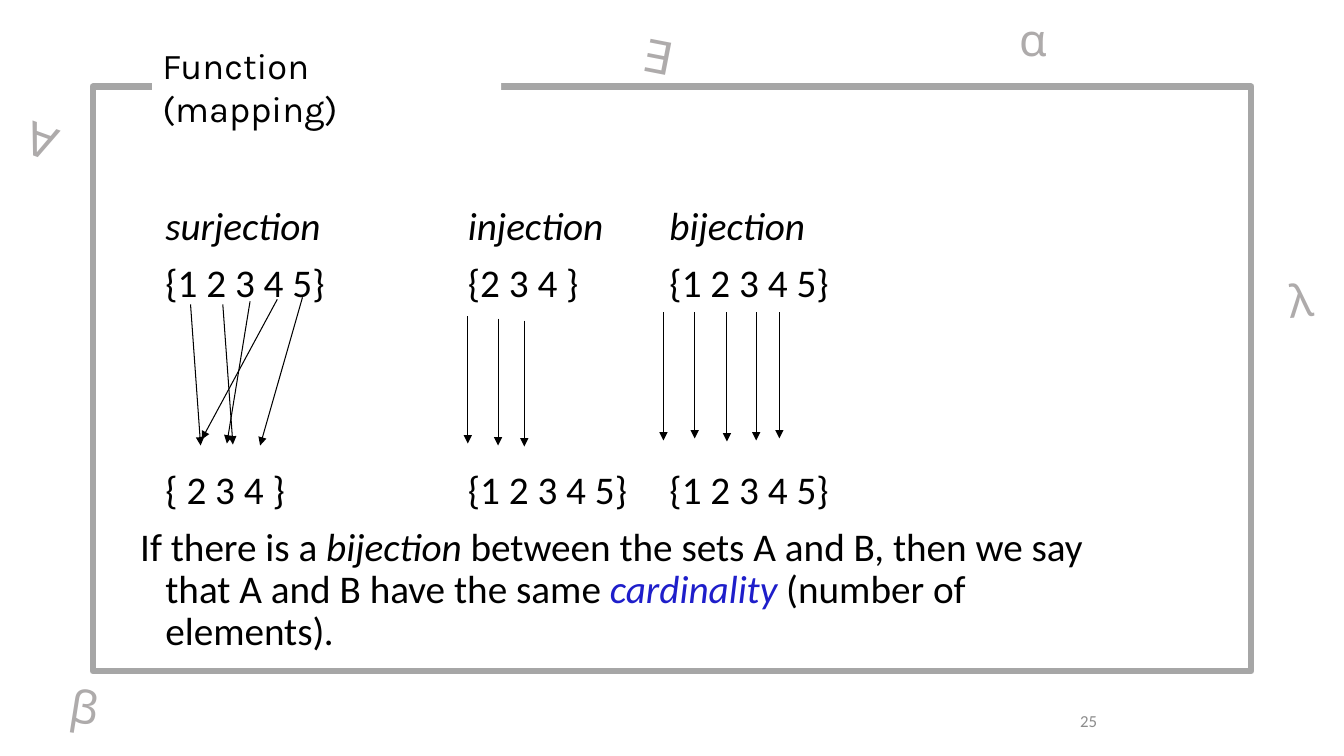
"""Builds a slide on surjections, injections and bijections."""
from lxml.etree import SubElement
from pptx import Presentation
from pptx.dml.color import RGBColor
from pptx.enum.shapes import MSO_CONNECTOR, MSO_SHAPE
from pptx.enum.text import MSO_ANCHOR, MSO_AUTO_SIZE, PP_ALIGN
from pptx.oxml.ns import qn
from pptx.util import Inches, Pt

TITLE = "Function (mapping)"
PAGE_NUMBER = "25"
ROW_TOPS = (2.05, 2.62, 4.67)
MAPPINGS = [
    (1.64, ("surjection", "{1 2 3 4 5}", "{ 2 3 4 }")),
    (4.64, ("injection", "{2 3 4 }", "{1 2 3 4 5}")),
    (6.64, ("bijection", "{1 2 3 4 5}", "{1 2 3 4 5}")),
]
CONCLUSION = [
    ("If there is a ", {}),
    ("bijection", {"italic": True}),
    (" between the sets A and B, then we say that A and B have the same ", {}),
    ("cardinality ", {"italic": True, "color": "1E1ECA"}),
    ("(number of elements)", {}),
    (".", {"italic": True}),
]
SLANTED_ARROWS = [
    (1.89, 3.02, 1.99, 4.42),
    (2.75, 2.97, 2.0, 4.36),
    (2.21, 3.02, 2.31, 4.41),
    (2.48, 2.99, 2.25, 4.4),
    (3.0, 2.95, 2.58, 4.42),
]
VERTICAL_ARROWS = [
    (4.64, 3.14, 4.4), (4.94, 3.16, 4.42), (5.2, 3.18, 4.43),
    (6.58, 3.1, 4.37), (6.89, 3.1, 4.35), (7.21, 3.1, 4.38),
    (7.5, 3.1, 4.37), (7.73, 3.1, 4.35),
]
SYMBOLS = [
    ("∀", 0.16, 1.09, 0.6, 20),
    ("∃", 6.28, 0.25, 0.63, 11),
    ("α", 10.01, 0.07, 0.63, 0),
    ("β", 0.6, 6.7, 0.58, 9),
    ("λ", 12.68, 2.64, 0.63, -6),
]


def rgb(value):
    return RGBColor.from_string(value)


def add_run(paragraph, text, size=28, font="Calibri", color="000000", italic=False):
    run = paragraph.add_run()
    run.text = text
    run.font.size = Pt(size)
    run.font.name = font
    run.font.color.rgb = rgb(color)
    run.font.italic = italic


def add_text(slide, box, runs, spacing=None, align=PP_ALIGN.LEFT,
             anchor=MSO_ANCHOR.TOP, margin=0, rotation=0):
    shape = slide.shapes.add_textbox(*map(Inches, box))
    shape.rotation = rotation
    frame = shape.text_frame
    frame.word_wrap = True
    frame.vertical_anchor = anchor
    frame.margin_left = frame.margin_right = Inches(margin)
    frame.margin_top = frame.margin_bottom = Inches(margin / 2)
    paragraph = frame.paragraphs[0]
    paragraph.alignment = align
    paragraph.line_spacing = spacing
    for text, style in runs:
        add_run(paragraph, text, **style)
    return paragraph


def add_arrow(slide, start_x, start_y, end_x, end_y):
    arrow = slide.shapes.add_connector(
        MSO_CONNECTOR.STRAIGHT, *map(Inches, (start_x, start_y, end_x, end_y)))
    arrow.line.color.rgb = rgb("000000")
    arrow.line.width = Pt(0.75)
    SubElement(arrow.line._get_or_add_ln(), qn("a:tailEnd"), type="triangle")
    SubElement(arrow._element.spPr, qn("a:effectLst"))


def add_frame(slide):
    frame = slide.shapes.add_shape(
        MSO_SHAPE.RECTANGLE, *map(Inches, (0.92, 0.86, 11.49, 5.8)))
    frame.shadow.inherit = False
    frame.fill.background()
    frame.line.color.rgb = rgb("A6A6A6")
    frame.line.width = Pt(4.5)


def format_title(slide):
    title = slide.shapes.title
    title.left, title.top, title.width, title.height = map(
        Inches, (1.51, 0.5, 3.46, 0.72))
    title.fill.solid()
    title.fill.fore_color.rgb = rgb("FFFFFF")
    frame = title.text_frame
    frame.auto_size = MSO_AUTO_SIZE.NONE
    frame.word_wrap = True
    frame.vertical_anchor = MSO_ANCHOR.MIDDLE
    frame.margin_right = Inches(0.5)
    paragraph = frame.paragraphs[0]
    paragraph.alignment = PP_ALIGN.LEFT
    add_run(paragraph, TITLE, size=25.9, font="Karla")
    slide.shapes._spTree.append(title._element)


def main():
    presentation = Presentation()
    presentation.slide_width = Inches(13.33)
    presentation.slide_height = Inches(7.5)
    slide = presentation.slides.add_slide(presentation.slide_layouts[5])

    for left, rows in MAPPINGS:
        for index, (top, text) in enumerate(zip(ROW_TOPS, rows)):
            add_text(slide, (left, top, 1.9, 0.43),
                     [(text, {"italic": index == 0})], spacing=0.9)
    conclusion = add_text(slide, (1.39, 5.23, 9.68, 1.28), CONCLUSION, spacing=0.9)
    properties = conclusion._p.get_or_add_pPr()
    properties.set("marL", str(Inches(0.25)))
    properties.set("indent", str(Inches(-0.25)))

    add_text(slide, (8.73, 6.95, 2.25, 0.4),
             [(PAGE_NUMBER, {"size": 12, "color": "8C8C8C"})],
             align=PP_ALIGN.RIGHT, anchor=MSO_ANCHOR.MIDDLE, margin=0.1)
    for points in SLANTED_ARROWS:
        add_arrow(slide, *points)
    for x, top, bottom in VERTICAL_ARROWS:
        add_arrow(slide, x, top, x, bottom)

    add_frame(slide)
    format_title(slide)
    for symbol, left, top, width, rotation in SYMBOLS:
        add_text(slide, (left, top, width, 0.64),
                 [(symbol, {"size": 32, "font": "Karla", "color": "AEABAB"})],
                 margin=0.1, rotation=rotation)
    presentation.save("out.pptx")


if __name__ == "__main__":
    main()
